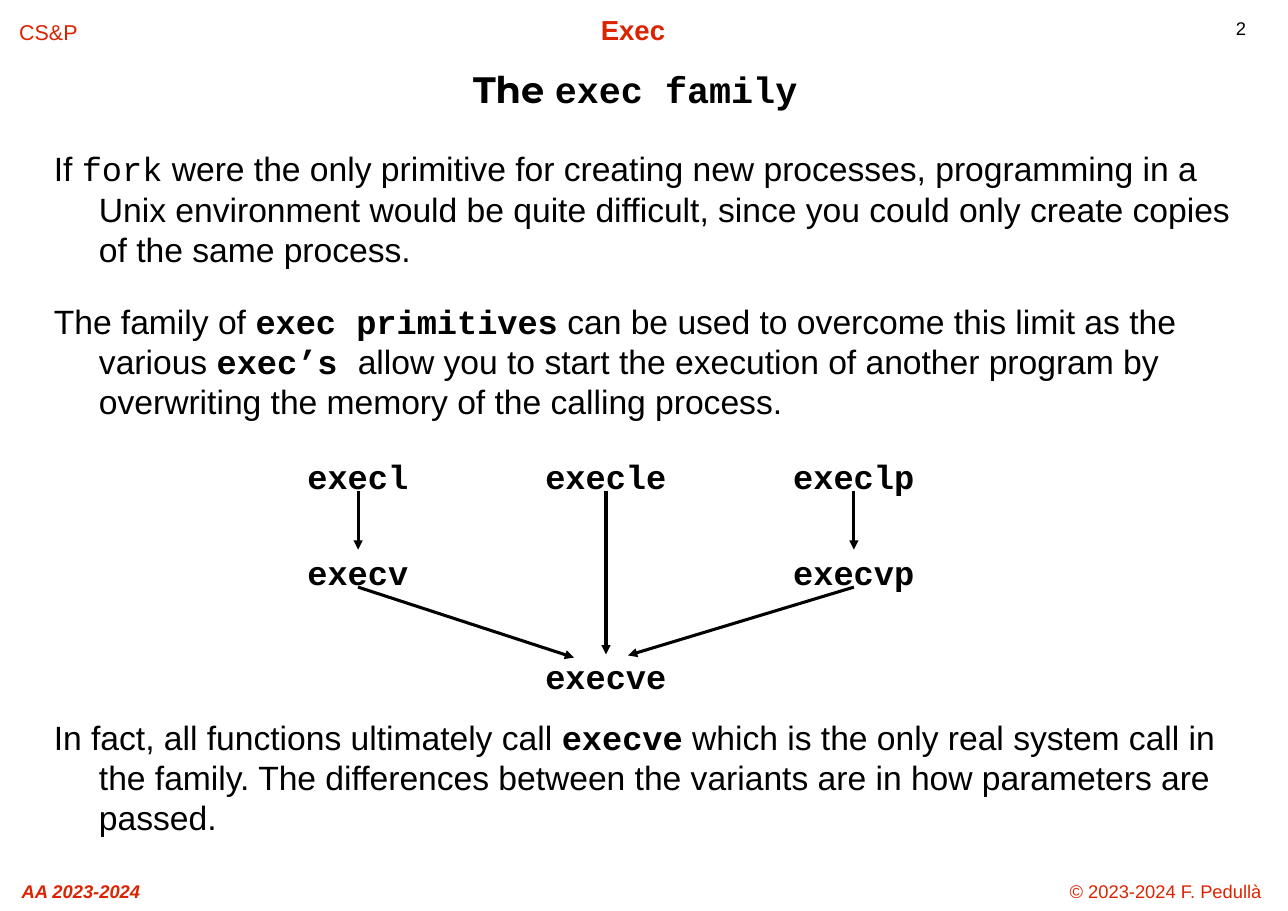
from dataclasses import dataclass

from lxml.etree import SubElement
from pptx import Presentation
from pptx.dml.color import RGBColor
from pptx.enum.shapes import MSO_CONNECTOR
from pptx.enum.text import MSO_ANCHOR, MSO_AUTO_SIZE, PP_ALIGN
from pptx.oxml.ns import qn
from pptx.shapes.autoshape import Shape
from pptx.shapes.connector import Connector
from pptx.slide import Slide
from pptx.text.text import TextFrame, _Paragraph as Paragraph
from pptx.util import Inches, Pt

BLACK = RGBColor(0x00, 0x00, 0x00)
RED = RGBColor(0xDC, 0x23, 0x00)
SANS = "Arial"
MONO = "Courier New"
TITLE_FONT = "Montserrat"
BODY_SIZE = 22
TOP, BOTTOM = 0, 2


@dataclass(frozen=True)
class Span:
    text: str
    font: str = SANS
    bold: bool = False
    italic: bool = False


@dataclass(frozen=True)
class Margin:
    """A red or black note in the header or footer."""
    span: Span
    box: tuple[float, float, float, float]
    size: int
    color: RGBColor = RED
    alignment: PP_ALIGN = PP_ALIGN.CENTER


@dataclass(frozen=True)
class Function:
    name: str
    left: float
    top: float


@dataclass(frozen=True)
class Call:
    """An arrow between functions, stopping at a point if one is given."""
    caller: str
    callee: str
    stop: tuple[float, float] | None = None


MARGINS = [
    Margin(Span("CS&P"), (0.06, 0.12, 0.76, 0.33), 14),
    Margin(Span("Exec", bold=True), (4.15, 0.07, 3.19, 0.33), 18),
    Margin(Span("2"), (11.12, 0.1, 0.57, 0.35), 12, BLACK, PP_ALIGN.LEFT),
    Margin(Span("AA 2023-2024", bold=True, italic=True), (0, 7.94, 1.47, 0.33), 12),
    Margin(Span("© 2023-2024 F. Pedullà"), (9.47, 7.94, 2.22, 0.33), 12),
]

TITLE = [Span("The ", TITLE_FONT, True), Span("exec family", MONO, True)]

INTRODUCTION = [
    [
        Span("If "),
        Span("fork", MONO),
        Span(" were the only primitive for creating new processes, programming in a "
             "Unix environment would be quite difficult, since you could only create "
             "copies of the same process."),
    ],
    [
        Span("The family of "),
        Span("exec primitives", MONO, True),
        Span(" can be used to overcome this limit as the various "),
        Span("exec’s ", MONO, True),
        Span("allow you to start the execution of another program by overwriting "
             "the memory of the calling process."),
    ],
]

CONCLUSION = [
    [
        Span("In fact, all functions ultimately call "),
        Span("execve", MONO, True),
        Span(" which is the only real system call in the family. The differences "
             "between the variants are in how parameters are passed."),
    ],
]

LEFT_COLUMN, MIDDLE_COLUMN, RIGHT_COLUMN = 2.79, 4.95, 7.2
LIST_ROW, VECTOR_ROW, SYSTEM_CALL_ROW = 4.12, 4.99, 5.94

FUNCTIONS = [
    Function("execl", LEFT_COLUMN, LIST_ROW),
    Function("execle", MIDDLE_COLUMN, LIST_ROW),
    Function("execlp", RIGHT_COLUMN, LIST_ROW),
    Function("execv", LEFT_COLUMN, VECTOR_ROW),
    Function("execvp", RIGHT_COLUMN, VECTOR_ROW),
    Function("execve", MIDDLE_COLUMN, SYSTEM_CALL_ROW),
]

CALLS = [
    Call("execl", "execv"),
    Call("execlp", "execvp"),
    Call("execle", "execve"),
    Call("execv", "execve", (5.21, 5.97)),
    Call("execvp", "execve", (5.7, 5.95)),
]


def add_spans(paragraph: Paragraph, spans: list[Span], size: int,
              color: RGBColor = BLACK) -> None:
    for span in spans:
        run = paragraph.add_run()
        run.text = span.text
        font = run.font
        font.name, font.size = span.font, Pt(size)
        font.bold, font.italic = span.bold, span.italic
        font.color.rgb = color


def add_text_box(slide: Slide, left: float, top: float, width: float,
                 height: float) -> Shape:
    shape = slide.shapes.add_textbox(
        Inches(left), Inches(top), Inches(width), Inches(height))
    shape.text_frame.word_wrap = True
    return shape


def add_margin(slide: Slide, margin: Margin) -> None:
    paragraph = add_text_box(slide, *margin.box).text_frame.paragraphs[0]
    paragraph.alignment = margin.alignment
    paragraph.line_spacing = 1.01
    add_spans(paragraph, [margin.span], margin.size, margin.color)


def format_title(title: Shape) -> None:
    title.left, title.top = Inches(2.88), Inches(0.52)
    title.width, title.height = Inches(5.77), Inches(0.63)
    text_frame = title.text_frame
    text_frame.auto_size = MSO_AUTO_SIZE.NONE
    text_frame.vertical_anchor = MSO_ANCHOR.MIDDLE
    paragraph = text_frame.paragraphs[0]
    paragraph.alignment = PP_ALIGN.CENTER
    paragraph.line_spacing = 0.85
    add_spans(paragraph, TITLE, 24)


def fill_body(text_frame: TextFrame, paragraphs: list[list[Span]]) -> None:
    """Write paragraphs with a hanging indent."""
    for index, spans in enumerate(paragraphs):
        paragraph = text_frame.add_paragraph() if index else text_frame.paragraphs[0]
        properties = paragraph._p.get_or_add_pPr()
        properties.set("marL", str(Inches(0.41)))
        properties.set("indent", str(-Inches(0.41)))
        paragraph.line_spacing = Pt(26.2)
        paragraph.space_before = Pt(21 if index else 0)
        add_spans(paragraph, spans, BODY_SIZE)


def add_function(slide: Slide, function: Function) -> Shape:
    width = 1.1 if len(function.name) == 6 else 0.92
    shape = add_text_box(slide, function.left, function.top, width, 0.34)
    text_frame = shape.text_frame
    text_frame.word_wrap = False
    text_frame.margin_left = text_frame.margin_right = 0
    text_frame.margin_top = text_frame.margin_bottom = 0
    paragraph = text_frame.paragraphs[0]
    paragraph.line_spacing = 1.05
    add_spans(paragraph, [Span(function.name, MONO, True)], BODY_SIZE)
    return shape


def add_call(slide: Slide, call: Call, boxes: dict[str, Shape]) -> None:
    stop_x, stop_y = call.stop or (0, 0)
    connector: Connector = slide.shapes.add_connector(
        MSO_CONNECTOR.STRAIGHT, 0, 0, Inches(stop_x), Inches(stop_y))
    connector.begin_connect(boxes[call.caller], BOTTOM)
    if call.stop is None:
        connector.end_connect(boxes[call.callee], TOP)
    connector.line.color.rgb = BLACK
    connector.line.width = Pt(0)
    SubElement(connector.line._get_or_add_ln(), qn("a:tailEnd"), type="triangle")
    SubElement(connector._element.spPr, qn("a:effectLst"))


def main() -> None:
    presentation = Presentation()
    presentation.slide_width, presentation.slide_height = Inches(11.69), Inches(8.27)
    slide = presentation.slides.add_slide(presentation.slide_layouts[5])
    for margin in MARGINS:
        add_margin(slide, margin)
    format_title(slide.shapes.title)
    fill_body(add_text_box(slide, 0.39, 1.3, 10.91, 2.7).text_frame, INTRODUCTION)
    fill_body(add_text_box(slide, 0.39, 6.46, 10.91, 1.25).text_frame, CONCLUSION)
    boxes = {function.name: add_function(slide, function) for function in FUNCTIONS}
    for call in CALLS:
        add_call(slide, call, boxes)
    presentation.save("out.pptx")


if __name__ == "__main__":
    main()
